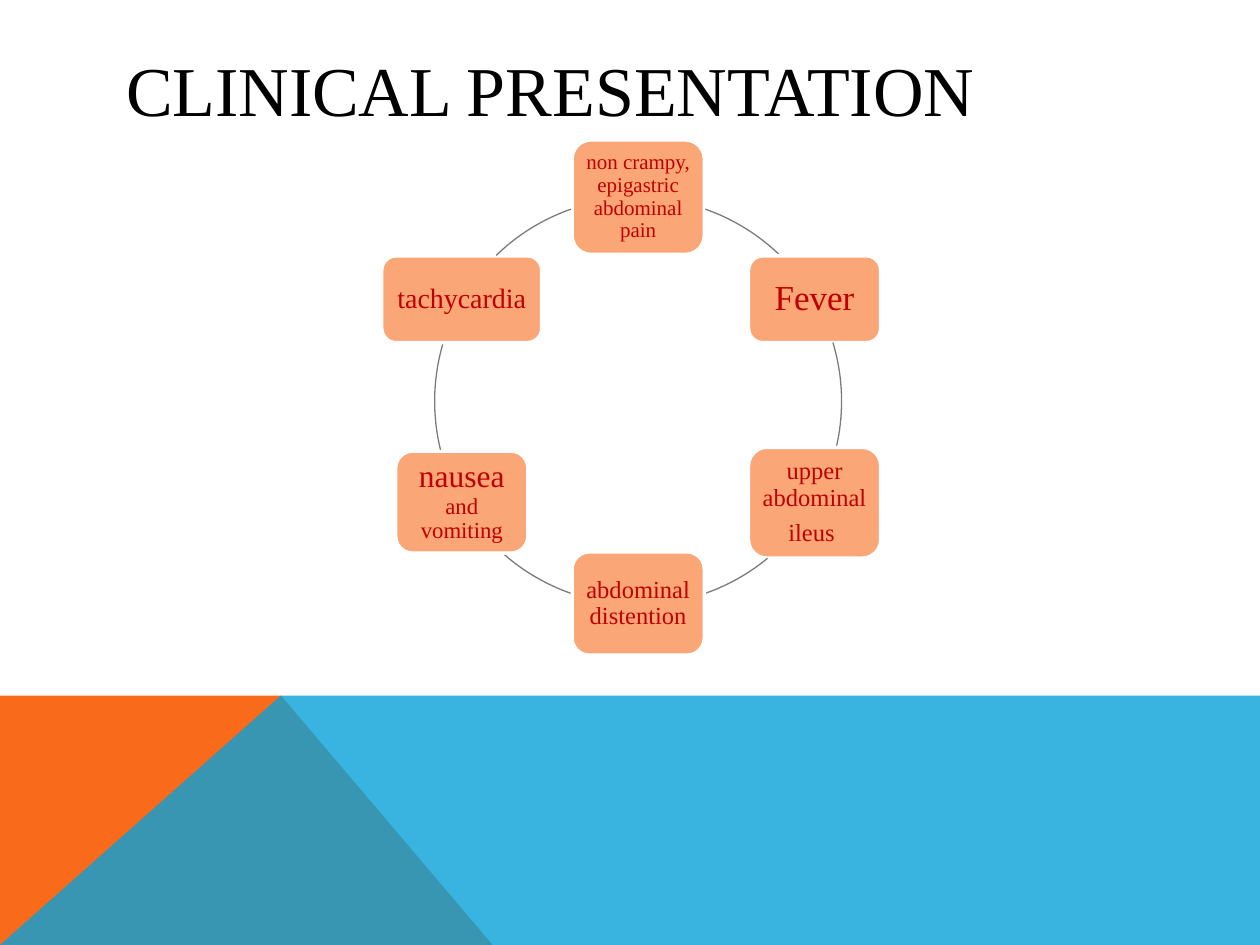
from dataclasses import dataclass

from lxml import etree
from pptx import Presentation
from pptx.dml.color import RGBColor
from pptx.enum.shapes import MSO_SHAPE
from pptx.enum.text import MSO_ANCHOR, MSO_AUTO_SIZE, PP_ALIGN
from pptx.oxml.ns import qn
from pptx.util import Inches, Pt

ROUNDED, ARC = MSO_SHAPE.ROUNDED_RECTANGLE, MSO_SHAPE.ARC
MIDDLE, NO_AUTOFIT = MSO_ANCHOR.MIDDLE, MSO_AUTO_SIZE.NONE
LEFT, CENTER = PP_ALIGN.LEFT, PP_ALIGN.CENTER

FONT = "Times New Roman"
COLORS = {
    "title": "000000",
    "orange": "F96A1B",
    "blue": "08A1D9",
    "box": "FBA676",
    "box_line": "FFFFFF",
    "box_text": "C00000",
    "ring": "797B7E",
}
RING_LEFT, RING_TOP, RING_SIZE = 3.45, 1.57, 3.23


@dataclass
class Run:
    text: str
    size: float


@dataclass
class Symptom:
    """A box on the ring; each paragraph is a list of runs."""
    left: float
    top: float
    width: float
    height: float
    inset: float
    paragraphs: list[list[Run]]


@dataclass
class RingArc:
    """Degrees run clockwise from the right-hand side."""
    start: float
    end: float


SYMPTOMS = [
    Symptom(4.54, 1.11, 1.05, 0.91, 0.05,
            [[Run("non crampy, epigastric abdominal pain", 12)]]),
    Symptom(5.94, 2.03, 1.05, 0.69, 0.08, [[Run("Fever", 20)]]),
    Symptom(5.94, 3.55, 1.05, 0.88, 0.06,
            [[Run("upper abdominal", 14)], [Run("ileus ", 14)]]),
    Symptom(4.54, 4.38, 1.05, 0.82, 0.06, [[Run("abdominal distention", 14)]]),
    Symptom(3.14, 3.58, 1.05, 0.81, 0.07,
            [[Run("nausea", 18), Run(" and vomiting", 13)]]),
    Symptom(3.03, 2.03, 1.27, 0.69, 0.07, [[Run("tachycardia", 16)]]),
]
RING_ARCS = [
    RingArc(289.3, 314.2), RingArc(343.2, 12.7), RingArc(50.5, 70.6),
    RingArc(109.4, 131.2), RingArc(166.2, 196.4), RingArc(225.8, 250.7),
]


def color(name: str) -> RGBColor:
    return RGBColor.from_string(COLORS[name])


def add_band(slide, points: list[tuple[float, float]], fill: str,
             opacity: int = 100) -> None:
    """Draw one polygon of the footer decoration."""
    corners = [(Inches(x), Inches(y)) for x, y in points]
    builder = slide.shapes.build_freeform(*corners[0])
    builder.add_line_segments(corners[1:], close=True)
    shape = builder.convert_to_shape()
    shape.shadow.inherit = False
    shape.line.fill.background()
    shape.fill.solid()
    shape.fill.fore_color.rgb = color(fill)
    if opacity < 100:
        solid_color = shape.fill._xPr.find(qn("a:solidFill"))[0]
        etree.SubElement(solid_color, qn("a:alpha")).set("val", str(opacity * 1000))


def format_title(slide, text: str) -> None:
    title = slide.shapes.title
    title.left, title.top = Inches(0.9), Inches(0.4)
    title.width, title.height = Inches(8.22), Inches(0.6)
    frame = title.text_frame
    frame.text = text
    frame.auto_size = NO_AUTOFIT
    frame.vertical_anchor = MIDDLE
    paragraph = frame.paragraphs[0]
    paragraph.alignment = LEFT
    paragraph.font.name = FONT
    paragraph.font.size = Pt(40)
    paragraph.font.color.rgb = color("title")


def add_symptom(slide, symptom: Symptom) -> None:
    shape = slide.shapes.add_shape(
        ROUNDED, Inches(symptom.left), Inches(symptom.top),
        Inches(symptom.width), Inches(symptom.height))
    shape.shadow.inherit = False
    shape.fill.solid()
    shape.fill.fore_color.rgb = color("box")
    shape.line.color.rgb = color("box_line")
    shape.line.width = Pt(2)

    frame = shape.text_frame
    frame.word_wrap = True
    frame.vertical_anchor = MIDDLE
    frame.margin_left = frame.margin_right = Inches(symptom.inset)
    frame.margin_top = frame.margin_bottom = Inches(symptom.inset)
    for index, runs in enumerate(symptom.paragraphs):
        paragraph = frame.add_paragraph() if index else frame.paragraphs[0]
        paragraph.alignment = CENTER
        paragraph.line_spacing = 0.9
        paragraph.space_after = Pt(0.35 * runs[0].size)
        paragraph.font.name = FONT
        paragraph.font.size = Pt(runs[0].size)
        paragraph.font.color.rgb = color("box_text")
        for item in runs:
            run = paragraph.add_run()
            run.text = item.text
            if item.size != runs[0].size:
                run.font.size = Pt(item.size)


def add_ring_arc(slide, arc: RingArc) -> None:
    shape = slide.shapes.add_shape(
        ARC, Inches(RING_LEFT), Inches(RING_TOP),
        Inches(RING_SIZE), Inches(RING_SIZE))
    # Angles are stored in 1/60000 degree, adjustments in 1/100000.
    for index, angle in enumerate((arc.start, arc.end)):
        shape.adjustments[index] = angle * 0.6
    shape.shadow.inherit = False
    shape.fill.background()
    shape.line.color.rgb = color("ring")
    shape.line.width = Pt(0.75)


def main() -> None:
    presentation = Presentation()
    presentation.slide_width, presentation.slide_height = Inches(10), Inches(7.5)
    slide = presentation.slides.add_slide(presentation.slide_layouts[5])

    add_band(slide, [(0, 7.5), (0, 5.52), (2.23, 5.52), (3.91, 7.5)], "orange")
    add_band(slide, [(0, 7.5), (2.23, 5.52), (10, 5.52), (10, 7.5)], "blue", 80)
    format_title(slide, "CLINICAL PRESENTATION")
    for symptom, arc in zip(SYMPTOMS, RING_ARCS):
        add_symptom(slide, symptom)
        add_ring_arc(slide, arc)

    presentation.save("out.pptx")


if __name__ == "__main__":
    main()
